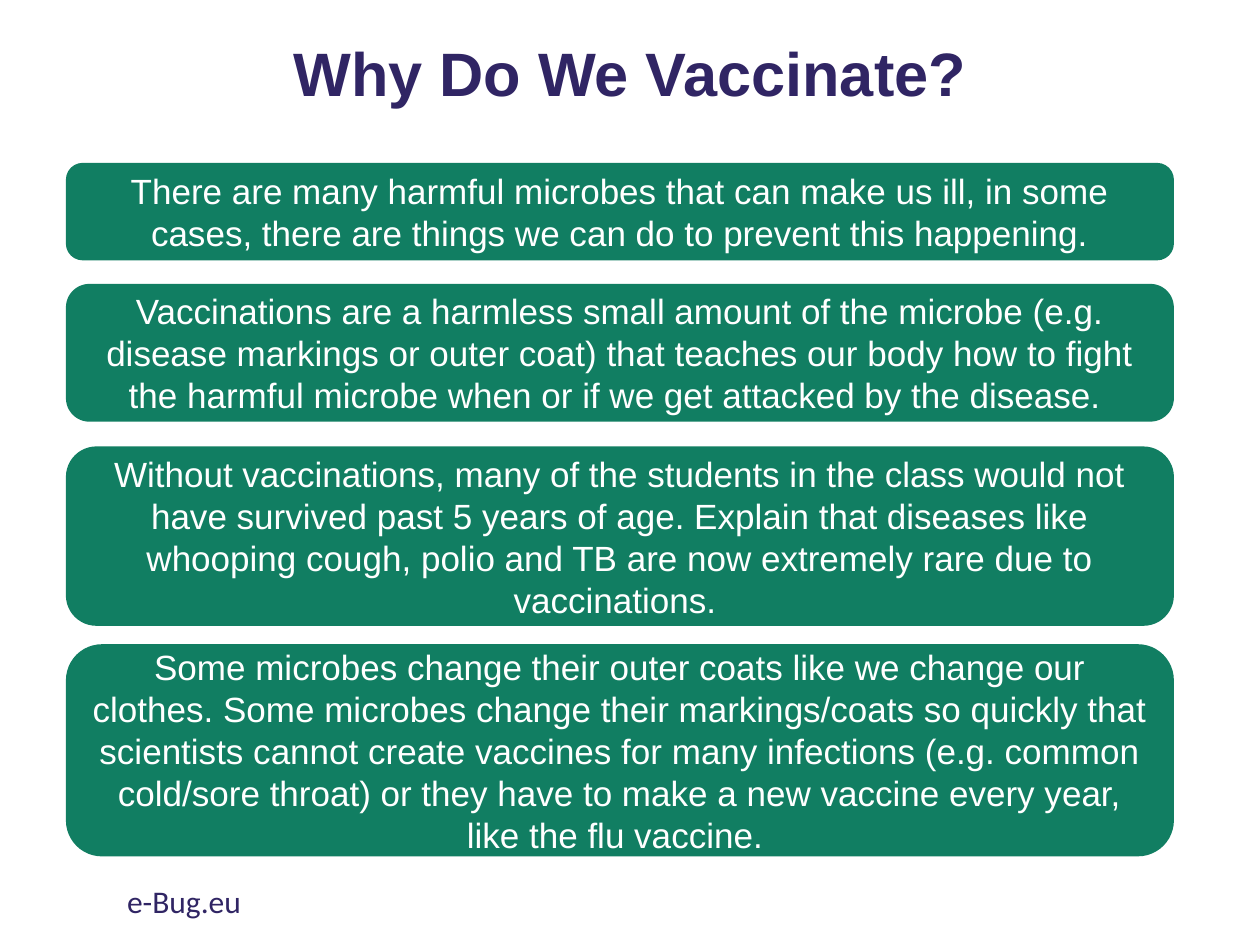
from pptx import Presentation
from pptx.dml.color import RGBColor
from pptx.enum import shapes, text
from pptx.util import Inches, Pt

COLORS = {"green": "117E62", "navy": "302564", "white": "FFFFFF"}

# Top, height and wording of each panel
PANELS = [
    (1.3, 0.76, "There are many harmful microbes that can make us ill, in some cases, "
     "there are things we can do to prevent this happening."),
    (2.26, 1.08, "Vaccinations are a harmless small amount of the microbe (e.g. disease "
     "markings or outer coat) that teaches our body how to fight the harmful microbe "
     "when or if we get attacked by the disease. "),
    (3.55, 1.41, "Without vaccinations, many of the students in the class would not have "
     "survived past 5 years of age. Explain that diseases like whooping cough, polio "
     "and TB are now extremely rare due to vaccinations. "),
    (5.12, 1.67, "Some microbes change their outer coats like we change our clothes. Some "
     "microbes change their markings/coats so quickly that scientists cannot create "
     "vaccines for many infections (e.g. common cold/sore throat) or they have to make "
     "a new vaccine every year, like the flu vaccine. "),
]


def color(name):
    return RGBColor.from_string(COLORS[name])


def write_text(shape, words, *, size, ink="navy", font="Arial", bold=False,
               align=text.PP_ALIGN.CENTER, anchor=text.MSO_ANCHOR.MIDDLE, spacing=None):
    frame = shape.text_frame
    frame.word_wrap = True
    frame.vertical_anchor = anchor
    paragraph = frame.paragraphs[0]
    paragraph.alignment = align
    paragraph.line_spacing = spacing
    run = paragraph.add_run()
    run.text = words
    run.font.name = font
    run.font.size = Pt(size)
    run.font.bold = bold
    run.font.color.rgb = color(ink)


class SlideBuilder:
    def __init__(self, slide):
        self.slide = slide
        self.fill = "green"
        self.line_width = Pt(1)

    def label(self, box, words, **text_format):
        shape = self.slide.shapes.add_textbox(*map(Inches, box))
        write_text(shape, words, **text_format)

    def panel(self, box, words, **text_format):
        shape = self.slide.shapes.add_shape(
            shapes.MSO_SHAPE.ROUNDED_RECTANGLE, *map(Inches, box))
        shape.shadow.inherit = False
        shape.fill.solid()
        shape.fill.fore_color.rgb = color(self.fill)
        shape.line.color.rgb = color(self.fill)
        shape.line.width = self.line_width
        write_text(shape, words, **text_format)


def main():
    presentation = Presentation()
    presentation.slide_width = Inches(10)
    presentation.slide_height = Inches(7.5)
    builder = SlideBuilder(presentation.slides.add_slide(presentation.slide_layouts[6]))

    # Title
    builder.label((0.69, 0.15, 8.62, 0.91), "Why Do We Vaccinate?",
                  size=35, bold=True, spacing=0.9)

    # Panels
    for top, height, words in PANELS:
        builder.panel((0.53, top, 8.78, height), words, size=20, ink="white")

    # Footer
    builder.label((0.91, 6.95, 3.38, 0.4), "e-Bug.eu", size=18, font="Calibri",
                  align=text.PP_ALIGN.LEFT, anchor=text.MSO_ANCHOR.TOP)

    presentation.save("out.pptx")


if __name__ == "__main__":
    main()
